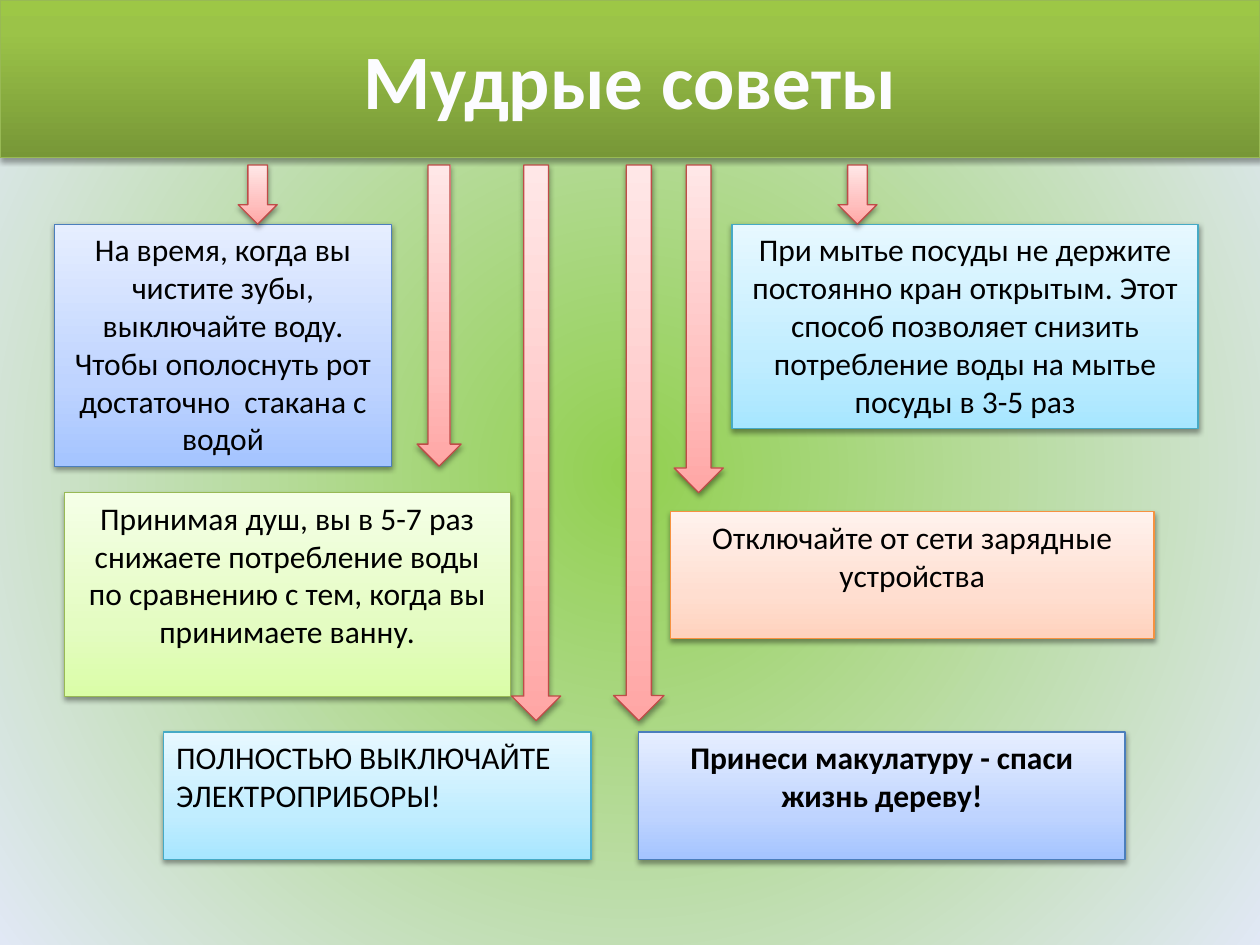
import dataclasses
import typing

import pptx
import pptx.dml.color
import pptx.enum.shapes
import pptx.enum.text
import pptx.oxml
import pptx.oxml.ns
import pptx.util

WIDE, HIGH = pptx.util.Inches(10), pptx.util.Inches(7.5)
COLS, ROWS = 100, 75
FONT = "Calibri"
KIND = pptx.enum.shapes.MSO_SHAPE
SIDE = pptx.enum.text.PP_ALIGN
EDGE = pptx.enum.text.MSO_ANCHOR
SPACE = pptx.oxml.ns.nsdecls("a")
NAME = pptx.oxml.ns.qn
Stops = dict[int, str]


class Theme(typing.NamedTuple):
    stops: Stops
    line: str


class Shade(typing.NamedTuple):
    alpha: int
    dist: float


@dataclasses.dataclass
class Card:
    """A tip; col, row, wide and high are in grid units."""
    col: float
    row: float
    wide: float
    high: float
    theme: Theme
    text: str
    bold: bool = False
    align: SIDE = SIDE.CENTER


@dataclasses.dataclass
class Arrow:
    col: float
    wide: float
    end: float


def soft(low: str, mid: str, top: str, line: str) -> Theme:
    return Theme({0: low, 35: mid, 100: top}, line)


BLUE = soft("A4C4FF", "BFD4FF", "E6EEFF", "4B7EBC")
AQUA = soft("A7E6FF", "C1EDFF", "E7F8FF", "46AAC5")
LIME = soft("DAFDA7", "E4FCC2", "F5FFE7", "98B955")
PEACH = soft("FFD2BD", "FFDED0", "FFF2ED", "F69240")
ROSE = soft("FFA6A5", "FFC0BF", "FFE7E7", "BF4C48")
GRASS = Theme({0: "779737", 80: "9BC348", 100: "9DC746"}, "98B955")
UP = '<a:lin ang="16200000" scaled="0"/>'
ROUND = ('<a:path path="circle"><a:fillToRect l="50000" t="50000" '
         'r="50000" b="50000"/></a:path>')
LIGHT = Shade(38, 1.6)

CARDS = [
    Card(4.3, 17.8, 26.8, 19.2, BLUE,
         "На время, когда вы чистите зубы, выключайте воду. "
         "Чтобы ополоснуть рот достаточно  стакана с водой"),
    Card(58.1, 17.8, 37, 16.2, AQUA,
         "При мытье посуды не держите постоянно кран открытым. Этот способ "
         "позволяет снизить потребление воды на мытье посуды в 3-5 раз"),
    Card(5.1, 39.1, 35.4, 16.2, LIME,
         "Принимая душ, вы в 5-7 раз снижаете потребление воды "
         "по сравнению с тем, когда вы принимаете ванну."),
    Card(13, 58.1, 33.9, 10.1, AQUA, "ПОЛНОСТЬЮ ВЫКЛЮЧАЙТЕ ЭЛЕКТРОПРИБОРЫ!",
         align=SIDE.LEFT),
    Card(53.2, 40.6, 38.4, 10.1, PEACH,
         "Отключайте от сети зарядные устройства"),
    Card(50.7, 58.1, 38.6, 10.1, BLUE,
         "Принеси макулатуру - спаси жизнь дереву!", bold=True),
]
START = 13.1
ARROWS = [Arrow(18.9, 3.1, 17.8), Arrow(66.5, 3.1, 17.8),
          Arrow(33.1, 3.5, 37), Arrow(53.5, 3.9, 39.1),
          Arrow(40.6, 3.9, 57.2), Arrow(48.7, 4, 57.2)]


def tint(code: str) -> pptx.dml.color.RGBColor:
    return pptx.dml.color.RGBColor.from_string(code)


def blend(fill, host, stops: Stops, course: str) -> None:
    """Fill the host element with a gradient of any number of stops."""
    fill.gradient()
    marks = "".join(f'<a:gs pos="{pos * 1000}"><a:srgbClr val="{code}"/></a:gs>'
                    for pos, code in stops.items())
    host.replace(host.find(NAME("a:gradFill")), pptx.oxml.parse_xml(
        f'<a:gradFill {SPACE} rotWithShape="1"><a:gsLst>{marks}</a:gsLst>'
        f'{course}</a:gradFill>'))


def block(slide, kind: KIND, col: float, row: float, wide: float, high: float,
          theme: Theme, shade: Shade = LIGHT):
    """Draw a shaded shape placed on the grid."""
    shape = slide.shapes.add_shape(
        kind, round(WIDE * col / COLS), round(HIGH * row / ROWS),
        round(WIDE * wide / COLS), round(HIGH * high / ROWS))
    props = shape.element.spPr
    blend(shape.fill, props, theme.stops, UP)
    shape.line.color.rgb = tint(theme.line)
    shape.line.width = pptx.util.Pt(0.75)
    shape.shadow.inherit = False
    props.find(NAME("a:effectLst")).append(pptx.oxml.parse_xml(
        f'<a:outerShdw {SPACE} blurRad="{pptx.util.Pt(3.1)}" '
        f'dist="{pptx.util.Pt(shade.dist)}" dir="5400000" rotWithShape="0">'
        f'<a:srgbClr val="000000"><a:alpha val="{shade.alpha * 1000}"/>'
        '</a:srgbClr></a:outerShdw>'))
    return shape


def write(shape, text: str, size: float, color: str, bold: bool,
          align: SIDE, edge: EDGE):
    frame = shape.text_frame
    frame.word_wrap = True
    frame.vertical_anchor = edge
    para = frame.paragraphs[0]
    para.alignment = align
    run = para.add_run()
    run.text = text
    form = {"name": FONT, "size": pptx.util.Pt(size), "bold": bold}
    for key, value in form.items():
        setattr(run.font, key, value)
    run.font.color.rgb = tint(color)
    return run


def head(slide) -> None:
    shape = block(slide, KIND.RECTANGLE, 0, 0, COLS, 12.5, GRASS,
                  Shade(35, 1.8))
    run = write(shape, "Мудрые советы", 44, "FCFCFF", True,
                SIDE.CENTER, EDGE.MIDDLE)
    # Faint blue outline of the letters
    run.font.fill  # colour is already set; the outline goes before it
    run.font._element.insert(0, pptx.oxml.parse_xml(
        f'<a:ln {SPACE} w="{pptx.util.Pt(0.07)}"><a:solidFill>'
        '<a:srgbClr val="1E7CEE"><a:alpha val="55000"/></a:srgbClr>'
        '</a:solidFill></a:ln>')) if hasattr(run.font, "_element") else None


def main() -> None:
    deck = pptx.Presentation()
    deck.slide_width, deck.slide_height = WIDE, HIGH
    slide = deck.slides.add_slide(deck.slide_layouts[6])

    # Background glow
    fill = slide.background.fill
    fill.gradient()
    blend(fill, slide.element.find(".//" + NAME("p:bgPr")),
          {0: "92D050", 100: "E1E8F5"}, ROUND)

    # Title band
    head(slide)

    # Tips
    for card in CARDS:
        shape = block(slide, KIND.RECTANGLE, card.col, card.row, card.wide,
                      card.high, card.theme)
        write(shape, card.text, 18, "000000", card.bold, card.align, EDGE.TOP)

    # Arrows from the title to the tips
    for arrow in ARROWS:
        block(slide, KIND.DOWN_ARROW, arrow.col, START, arrow.wide,
              arrow.end - START, ROSE)

    deck.save("out.pptx")


if __name__ == "__main__":
    main()
